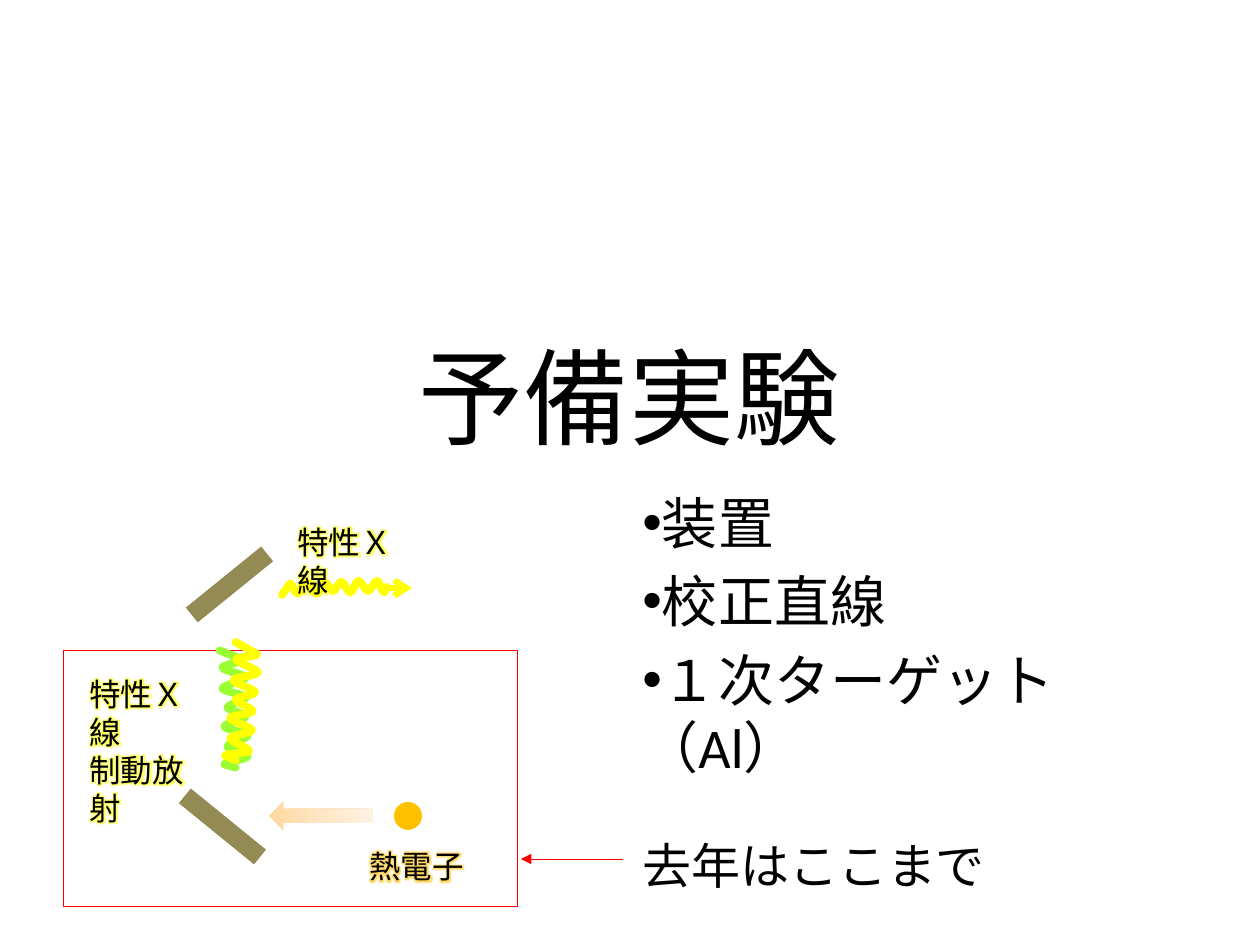
import copy
from dataclasses import dataclass

import pptx
import pptx.dml.color
import pptx.enum.shapes
import pptx.enum.text
import pptx.oxml
import pptx.oxml.ns
import pptx.util
from lxml import etree

EMU_PER_PX = 914400 / 126
SHAPES = pptx.enum.shapes.MSO_SHAPE
ALIGN = pptx.enum.text.PP_ALIGN
ANCHOR = pptx.enum.text.MSO_ANCHOR
FONT = "Calibri"
RED, YELLOW, GREEN, OLIVE, ORANGE = "FF0000", "FFFF00", "99FF33", "948A54", "FFC000"

# Turning points of every ray, inside a frame of 117 by 28 px
WAVE_WIDTH, WAVE_HEIGHT = 117, 28
WAVE_TURNS = [(0, 28), (9, 5), (17, 25), (27, 2), (38, 25), (47, 2), (57, 20),
              (66, 2), (76, 23), (85, 0), (96, 20), (106, 0), (114, 23), (117, 12)]


@dataclass
class Box:
    left: int
    top: int
    width: int
    height: int


@dataclass
class Label:
    box: Box
    lines: list[str]
    size: int
    align: ALIGN = ALIGN.LEFT
    anchor: ANCHOR = ANCHOR.TOP
    space_before: float = 0
    bullet: str = ""
    glow: str = ""


@dataclass
class Wave:
    box: Box
    color: str
    rotation: float = 0


@dataclass
class Arrow:
    start: tuple[int, int]
    end: tuple[int, int]
    color: str
    head: str
    width: float = 0


def px(value: float) -> int:
    return round(value * EMU_PER_PX)


def rgb(color: str) -> pptx.dml.color.RGBColor:
    return pptx.dml.color.RGBColor.from_string(color)


def bounds(box: Box) -> list[int]:
    return [px(value) for value in (box.left, box.top, box.width, box.height)]


def add_element(parent, tag: str, **attributes: str):
    return etree.SubElement(parent, pptx.oxml.ns.qn(tag), **attributes)


def drop_style(shape) -> None:
    """Leave the line at its default hairline width."""
    shape._element.remove(shape._element.find(pptx.oxml.ns.qn("p:style")))


def add_shape(slide, kind, box: Box, fill: str = "", line: str = "", rotation: float = 0):
    shape = slide.shapes.add_shape(kind, *bounds(box))
    shape.shadow.inherit = False
    shape.rotation = rotation
    if fill:
        shape.fill.solid()
        shape.fill.fore_color.rgb = rgb(fill)
    else:
        shape.fill.background()
    if line:
        shape.line.color.rgb = rgb(line)
        drop_style(shape)
    else:
        shape.line.fill.background()
    return shape


def add_label(slide, label: Label) -> None:
    frame = slide.shapes.add_textbox(*bounds(label.box)).text_frame
    frame.word_wrap = True
    frame.vertical_anchor = label.anchor
    for index, line in enumerate(label.lines):
        paragraph = frame.add_paragraph() if index else frame.paragraphs[0]
        paragraph.alignment = label.align
        if label.space_before:
            paragraph.space_before = pptx.util.Pt(label.space_before)
        if label.bullet:
            properties = paragraph._p.get_or_add_pPr()
            add_element(properties, "a:buFont", typeface="Arial")
            add_element(properties, "a:buChar", char=label.bullet)
        run = paragraph.add_run()
        run.text = line
        run.font.size = pptx.util.Pt(label.size)
        run.font.color.rgb = rgb("000000")
        if label.glow:
            effects = add_element(run.font._element, "a:effectLst")
            glow = add_element(effects, "a:glow", rad=str(pptx.util.Pt(5)))
            color = add_element(glow, "a:srgbClr", val=label.glow)
            add_element(color, "a:alpha", val="60000")
        run.font.name = FONT


def add_wave(slide, wave: Wave) -> None:
    """Stretch the turning points over the box and round the inner bends."""
    box = wave.box
    start, *turns = [(px(box.left + x * box.width / WAVE_WIDTH),
                      px(box.top + y * box.height / WAVE_HEIGHT)) for x, y in WAVE_TURNS]
    builder = slide.shapes.build_freeform(*start)
    builder.add_line_segments(turns, close=False)
    shape = builder.convert_to_shape()
    shape.shadow.inherit = False
    shape.rotation = wave.rotation
    shape.fill.background()
    shape.line.color.rgb = rgb(wave.color)
    shape.line.width = pptx.util.Pt(4.5)
    line = shape.line._get_or_add_ln()
    line.set("cap", "rnd")
    add_element(line, "a:round")

    segments = list(shape._element.iter(pptx.oxml.ns.qn("a:lnTo")))
    corners = [(int(segment[0].get("x")), int(segment[0].get("y"))) for segment in segments]
    for segment, (x1, y1), (x2, y2) in zip(segments[1:-1], corners, corners[1:]):
        curve = etree.Element(pptx.oxml.ns.qn("a:cubicBezTo"))
        third = (x2 - x1) // 3
        for x, y in ((x1 + third, y1), (x2 - third, y2), (x2, y2)):
            add_element(curve, "a:pt", x=str(x), y=str(y))
        segment.getparent().replace(segment, curve)


def add_arrow(slide, arrow: Arrow) -> None:
    ends = [px(value) for value in (*arrow.start, *arrow.end)]
    connector = slide.shapes.add_connector(pptx.enum.shapes.MSO_CONNECTOR.STRAIGHT, *ends)
    connector.line.color.rgb = rgb(arrow.color)
    if arrow.width:
        connector.line.width = pptx.util.Pt(arrow.width)
    else:
        drop_style(connector)
    add_element(connector.line._get_or_add_ln(), "a:tailEnd", type=arrow.head)
    add_element(connector._element.spPr, "a:effectLst")


def add_beam(slide, box: Box, colors: list[str]) -> None:
    fill = add_shape(slide, SHAPES.LEFT_ARROW, box).fill
    fill.gradient()
    fill.gradient_angle = 0
    first = fill.gradient_stops[0]._gs
    first.addnext(copy.deepcopy(first))
    for index, (stop, color) in enumerate(zip(fill.gradient_stops, colors)):
        stop.position = index / (len(colors) - 1)
        stop.color.rgb = rgb(color)


HEADINGS = [
    Label(Box(94, 294, 1070, 203), ["予備実験"], 60, ALIGN.CENTER, ANCHOR.MIDDLE),
    Label(Box(630, 482, 558, 228), ["装置", "校正直線", "１次ターゲット（Al）"], 32,
          space_before=6.4, bullet="•"),
    Label(Box(630, 829, 387, 72), ["去年はここまで"], 28, space_before=14),
]
RAY_LABELS = [
    Label(Box(352, 841, 129, 48), ["熱電子"], 18, ALIGN.CENTER, glow=ORANGE),
    Label(Box(77, 669, 135, 88), ["特性Ｘ線", "制動放射"], 18, glow=YELLOW),
    Label(Box(285, 517, 121, 54), ["特性Ｘ線"], 18, glow=YELLOW),
]


def main() -> None:
    presentation = pptx.Presentation()
    presentation.slide_width = px(1260)
    presentation.slide_height = px(945)
    slide = presentation.slides.add_slide(presentation.slide_layouts[6])

    # Last year's scope, title and topics
    add_shape(slide, SHAPES.RECTANGLE, Box(64, 651, 454, 256), line=RED)
    for label in HEADINGS:
        add_label(slide, label)
    add_arrow(slide, Arrow((623, 859), (521, 859), RED, "triangle"))

    # Electron beam hitting the first target
    add_wave(slide, Wave(Box(175, 695, 117, 28), GREEN, 90))
    add_shape(slide, SHAPES.OVAL, Box(394, 802, 28, 28), fill=ORANGE)
    add_beam(slide, Box(269, 802, 104, 28), ["FFD8A0", "FFE6C5", "FFF2E3"])
    add_shape(slide, SHAPES.RECTANGLE, Box(174, 817, 97, 19), fill=OLIVE, rotation=39.1)

    # Rays and second target
    add_wave(slide, Wave(Box(282, 581, 105, 14), YELLOW))
    add_arrow(slide, Arrow((387, 588), (412, 588), YELLOW, "arrow", 3.25))
    for label in RAY_LABELS:
        add_label(slide, label)
    add_wave(slide, Wave(Box(183, 688, 117, 28), YELLOW, 97.8))
    add_shape(slide, SHAPES.RECTANGLE, Box(181, 575, 97, 19), fill=OLIVE, rotation=321)

    presentation.save("out.pptx")


if __name__ == "__main__":
    main()
